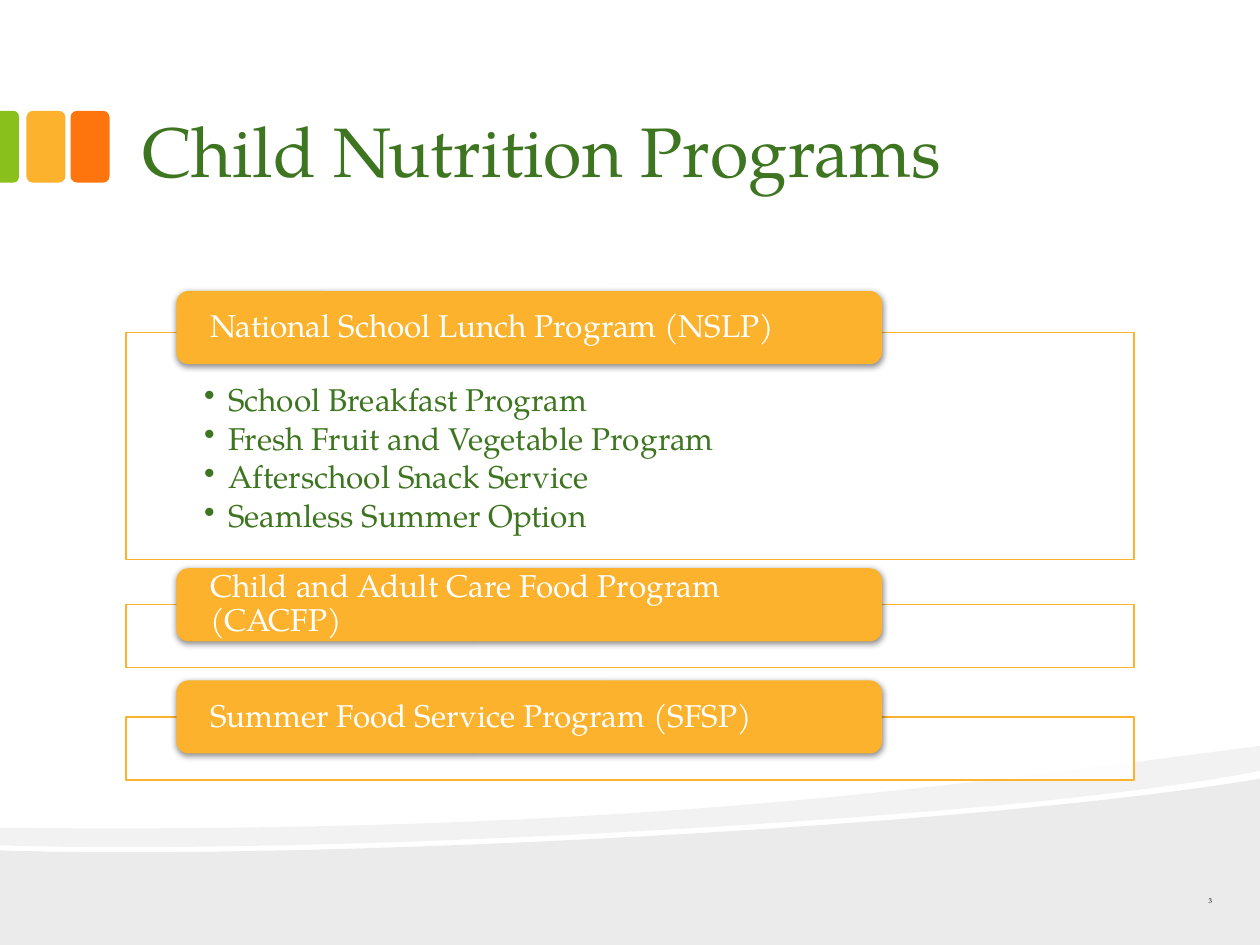
from pptx import Presentation
from pptx.dml.color import RGBColor
from pptx.enum.shapes import MSO_SHAPE
from pptx.enum.text import MSO_ANCHOR, MSO_AUTO_SIZE, PP_ALIGN
from pptx.oxml import parse_xml
from pptx.oxml.ns import nsdecls, qn
from pptx.util import Inches, Pt
from lxml.etree import SubElement

FONT = "TeX Gyre Pagella"
GREEN, GOLD = RGBColor(0x3E, 0x75, 0x20), RGBColor(0xFC, 0xB2, 0x2C)
LIME, ORANGE = RGBColor(0x89, 0xC0, 0x1C), RGBColor(0xFE, 0x75, 0x0E)
BLACK, WHITE = RGBColor(0, 0, 0), RGBColor(255, 255, 255)

TITLE = "Child Nutrition Programs"
NUMBER = "3"
PROGRAMS = [
    # pill top, frame top, frame height, name, items
    (2.31, 2.64, 1.8, "National School Lunch Program (NSLP)",
     ["School Breakfast Program", "Fresh Fruit and Vegetable Program",
      "Afterschool Snack Service", "Seamless Summer Option"]),
    (4.51, 4.8, 0.5, "Child and Adult Care Food Program (CACFP)", []),
    (5.4, 5.69, 0.5, "Summer Food Service Program (SFSP)", []),
]
WAVES = [
    (8, [[(10, 6.18)], [(10, 7.5)], [(0, 7.5)], [(0, 6.75)],
         [(2.64, 6.83), (7.82, 6.55), (10, 6.18)]]),
    (5, [[(10, 5.92)], [(10, 6.12)],
         [(9.42, 6.23), (8.62, 6.33), (7.72, 6.41)],
         [(5.23, 6.63), (1.93, 6.77), (0, 6.71)], [(0, 6.57)],
         [(4.89, 6.62), (7.28, 6.27), (10, 5.92)]]),
]
BARS = [(0.56, ORANGE), (0.21, GOLD)]


def trace(parts, steps=24):
    """Return the points of an outline made of lines and cubic curves."""
    dots = []
    for part in parts:
        if len(part) == 1:
            dots += part
            continue
        ends = [dots[-1], *part]
        for n in range(1, steps + 1):
            t = n / steps
            share = ((1 - t) ** 3, 3 * t * (1 - t) ** 2, 3 * t * t * (1 - t), t ** 3)
            dots.append(tuple(sum(s * p[k] for s, p in zip(share, ends)) for k in (0, 1)))
    return dots


def paint(shape, fill, clear=None, line=None):
    """Give a shape its fill, opacity in percent and line."""
    shape.shadow.inherit = False
    shape.fill.solid()
    shape.fill.fore_color.rgb = fill
    if clear:
        tint = shape.fill._xPr.find(".//" + qn("a:srgbClr"))
        SubElement(tint, qn("a:alpha"), val=str(clear * 1000))
    if line:
        shape.line.color.rgb = line
        shape.line.width = Pt(0.75)
    else:
        shape.line.fill.background()


def add(slide, kind, box, *look):
    """Add a painted preset shape."""
    shape = slide.shapes.add_shape(kind, *map(Inches, box))
    paint(shape, *look)
    return shape


def write(shape, lines, size, color, inset, anchor, align=PP_ALIGN.LEFT, pitch=0.9, gap=0):
    """Fill a shape with paragraphs of one style."""
    frame = shape.text_frame
    frame.word_wrap = True
    frame.auto_size = MSO_AUTO_SIZE.NONE
    frame.vertical_anchor = anchor
    (frame.margin_left, frame.margin_top,
     frame.margin_right, frame.margin_bottom) = map(Inches, inset)
    frame.text = "\n".join(lines)
    for par in frame.paragraphs:
        par.alignment, par.line_spacing, par.space_after = align, pitch, Pt(gap)
        par.font.name, par.font.size, par.font.color.rgb = FONT, Pt(size), color
    return frame


def bullet(par):
    """Give a paragraph a hanging bullet."""
    props = par._p.get_or_add_pPr()
    props.set("marL", str(Inches(0.19)))
    props.set("indent", str(Inches(-0.19)))
    mark = parse_xml(f'<a:buChar {nsdecls("a")} char="•"/>')
    props.insert_element_before(mark, "a:tabLst", "a:defRPr", "a:extLst")


def shade(shape):
    """Put a soft shadow under a shape."""
    glow = shape._element.spPr.find(qn("a:effectLst"))
    glow.append(parse_xml(
        f'<a:outerShdw {nsdecls("a")} blurRad="{Pt(3.5)}" dist="{Pt(1.1)}" dir="5400000" '
        'rotWithShape="0"><a:srgbClr val="000000"><a:alpha val="45000"/></a:srgbClr></a:outerShdw>'))


def main():
    """Build the slide of nutrition programs."""
    deck = Presentation()
    deck.slide_width, deck.slide_height = Inches(10), Inches(7.5)
    slide = deck.slides.add_slide(deck.slide_layouts[5])

    for clear, parts in WAVES:
        first, *rest = trace(parts)
        pen = slide.shapes.build_freeform(*map(Inches, first))
        pen.add_line_segments([tuple(map(Inches, dot)) for dot in rest])
        paint(pen.convert_to_shape(), BLACK, clear)

    for left, color in BARS:
        add(slide, MSO_SHAPE.ROUNDED_RECTANGLE, (left, 0.88, 0.31, 0.57), color)
    edge = add(slide, MSO_SHAPE.ROUND_2_SAME_RECTANGLE, (-0.21, 1.09, 0.57, 0.15), LIME)
    edge.adjustments[0] = 0.29
    edge.rotation = 90

    pad = (0.13, 0.07, 0.13, 0.07)
    title = slide.shapes.title
    title.left, title.top, title.width, title.height = map(Inches, (1, 0.17, 8, 1.42))
    write(title, [TITLE], 40, GREEN, pad, MSO_ANCHOR.BOTTOM, pitch=1.0)
    page = slide.shapes.add_textbox(*map(Inches, (9.08, 7.05, 0.67, 0.2)))
    write(page, [NUMBER], 4, BLACK, pad, MSO_ANCHOR.MIDDLE, PP_ALIGN.RIGHT)

    for top, base, height, name, items in PROGRAMS:
        box = add(slide, MSO_SHAPE.RECTANGLE, (1, base, 8, height), WHITE, 90, GOLD)
        if items:
            frame = write(box, items, 18, GREEN, (0.62, 0.41, 0.62, 0.14), MSO_ANCHOR.TOP, gap=2.7)
            for par in frame.paragraphs:
                bullet(par)
        pill = add(slide, MSO_SHAPE.ROUNDED_RECTANGLE, (1.4, top, 5.6, 0.58), GOLD)
        shade(pill)
        write(pill, [name], 18, WHITE, (0.24, 0, 0.24, 0), MSO_ANCHOR.MIDDLE)

    deck.save("out.pptx")


if __name__ == "__main__":
    main()
